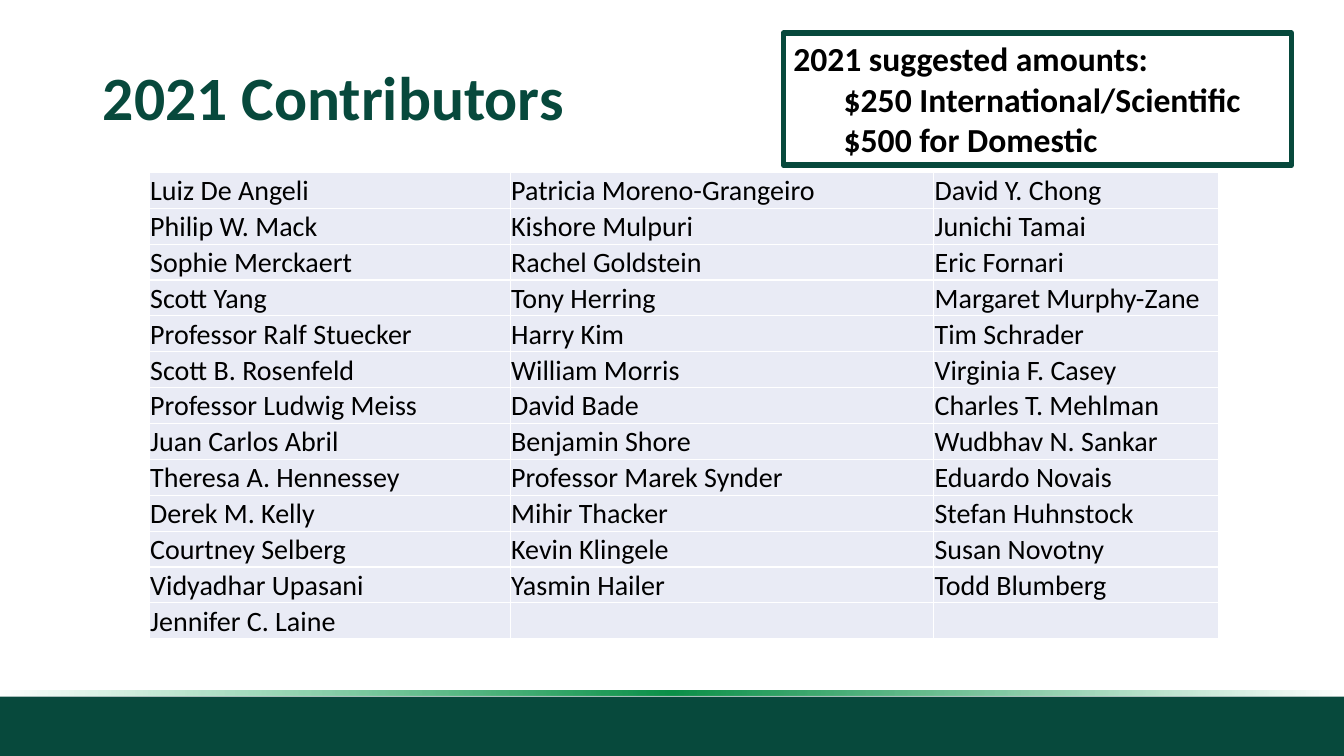
"""Build the 2021 Contributors slide."""
from lxml import etree
from pptx import Presentation
from pptx.dml.color import RGBColor
from pptx.enum import shapes, text
from pptx.oxml import ns
from pptx.util import Inches, Pt

GREEN = RGBColor(0x07, 0x49, 0x3C)
BLACK = RGBColor(0x00, 0x00, 0x00)
CELL = RGBColor(0xE9, 0xEB, 0xF5)
GLOW_STOPS = [(0, "0D9D4F", 0), (50, "0C9049", 100), (100, "0FAB56", 0)]

CONTRIBUTORS = [
    ("Luiz De Angeli", "Patricia Moreno-Grangeiro", "David Y. Chong"),
    ("Philip W. Mack", "Kishore Mulpuri", "Junichi Tamai"),
    ("Sophie Merckaert", "Rachel Goldstein", "Eric Fornari"),
    ("Scott Yang", "Tony Herring", "Margaret Murphy-Zane"),
    ("Professor Ralf Stuecker", "Harry Kim", "Tim Schrader"),
    ("Scott B. Rosenfeld", "William Morris", "Virginia F. Casey"),
    ("Professor Ludwig Meiss", "David Bade", "Charles T. Mehlman"),
    ("Juan Carlos Abril", "Benjamin Shore", "Wudbhav N. Sankar"),
    ("Theresa A. Hennessey", "Professor Marek Synder", "Eduardo Novais"),
    ("Derek M. Kelly", "Mihir Thacker", "Stefan Huhnstock"),
    ("Courtney Selberg", "Kevin Klingele", "Susan Novotny"),
    ("Vidyadhar Upasani", "Yasmin Hailer", "Todd Blumberg"),
    ("Jennifer C. Laine", "", ""),
]
COLUMN_WIDTHS = [3.58, 4.2, 2.83]
ROW_HEIGHT = 0.356
AMOUNTS = [
    "2021 suggested amounts:",
    "$250 International/Scientific",
    "$500 for Domestic",
]


def add_rect(left, top, width, height):
    sp = s.shapes.add_shape(shapes.MSO_SHAPE.RECTANGLE, Inches(left),
                            Inches(top), Inches(width), Inches(height))
    sp.shadow.inherit = False
    return sp


def set_font(p, size, color, bold=False):
    p.font.name = "Calibri"
    p.font.size = Pt(size)
    p.font.bold = bold
    p.font.color.rgb = color


prs = Presentation()
prs.slide_width = Inches(13.33)
prs.slide_height = Inches(7.5)
s = prs.slides.add_slide(prs.slide_layouts[5])

footer = add_rect(0, 6.91, 13.33, 0.59)
footer.fill.solid()
footer.fill.fore_color.rgb = GREEN
footer.line.fill.background()

glow = add_rect(0, 6.85, 13.33, 0.05)
glow.line.fill.background()
glow.fill.gradient()
glow.fill.gradient_angle = 180
stops = glow.element.spPr.find(".//" + ns.qn("a:gsLst"))
for stop in list(stops):
    stops.remove(stop)
for position, color, opacity in GLOW_STOPS:
    stop = etree.SubElement(stops, ns.qn("a:gs"), pos=str(position * 1000))
    rgb = etree.SubElement(stop, ns.qn("a:srgbClr"), val=color)
    etree.SubElement(rgb, ns.qn("a:alpha"), val=str(opacity * 1000))

title = s.shapes.title
title.left, title.top = Inches(0.92), Inches(0.4)
title.width, title.height = Inches(11.5), Inches(1.19)
title.text_frame.text = "2021 Contributors"
title.text_frame.vertical_anchor = text.MSO_ANCHOR.MIDDLE
p = title.text_frame.paragraphs[0]
p.alignment = text.PP_ALIGN.LEFT
p.line_spacing = 0.9
set_font(p, 44, GREEN, True)

amounts = add_rect(7.77, 0.33, 5.04, 1.31)
amounts.fill.background()
amounts.line.color.rgb = GREEN
amounts.line.width = Pt(4)
tf = amounts.text_frame
tf.word_wrap = True
tf.auto_size = text.MSO_AUTO_SIZE.SHAPE_TO_FIT_TEXT
tf.vertical_anchor = text.MSO_ANCHOR.TOP
tf.text = "\n".join(AMOUNTS)
for i, p in enumerate(tf.paragraphs):
    p.alignment = text.PP_ALIGN.LEFT
    set_font(p, 24, BLACK, True)
    if i > 0:
        p.level = 1
        p._p.get_or_add_pPr().set("marL", str(Inches(0.5)))
        p._p.get_or_add_pPr().set("indent", "0")

table = s.shapes.add_table(
    len(CONTRIBUTORS), len(COLUMN_WIDTHS), Inches(1.48), Inches(1.71),
    Inches(sum(COLUMN_WIDTHS)), Inches(ROW_HEIGHT * len(CONTRIBUTORS))).table
table.first_row = False
table.horz_banding = False
for column, width in zip(table.columns, COLUMN_WIDTHS):
    column.width = Inches(width)
for row, names in zip(table.rows, CONTRIBUTORS):
    row.height = Inches(ROW_HEIGHT)
    for cell, name in zip(row.cells, names):
        cell.fill.solid()
        cell.fill.fore_color.rgb = CELL
        cell.margin_left = cell.margin_right = cell.margin_top = Inches(0.01)
        cell.margin_bottom = 0
        cell.vertical_anchor = text.MSO_ANCHOR.BOTTOM
        cell.text = name
        set_font(cell.text_frame.paragraphs[0], 20, BLACK)

prs.save("out.pptx")
